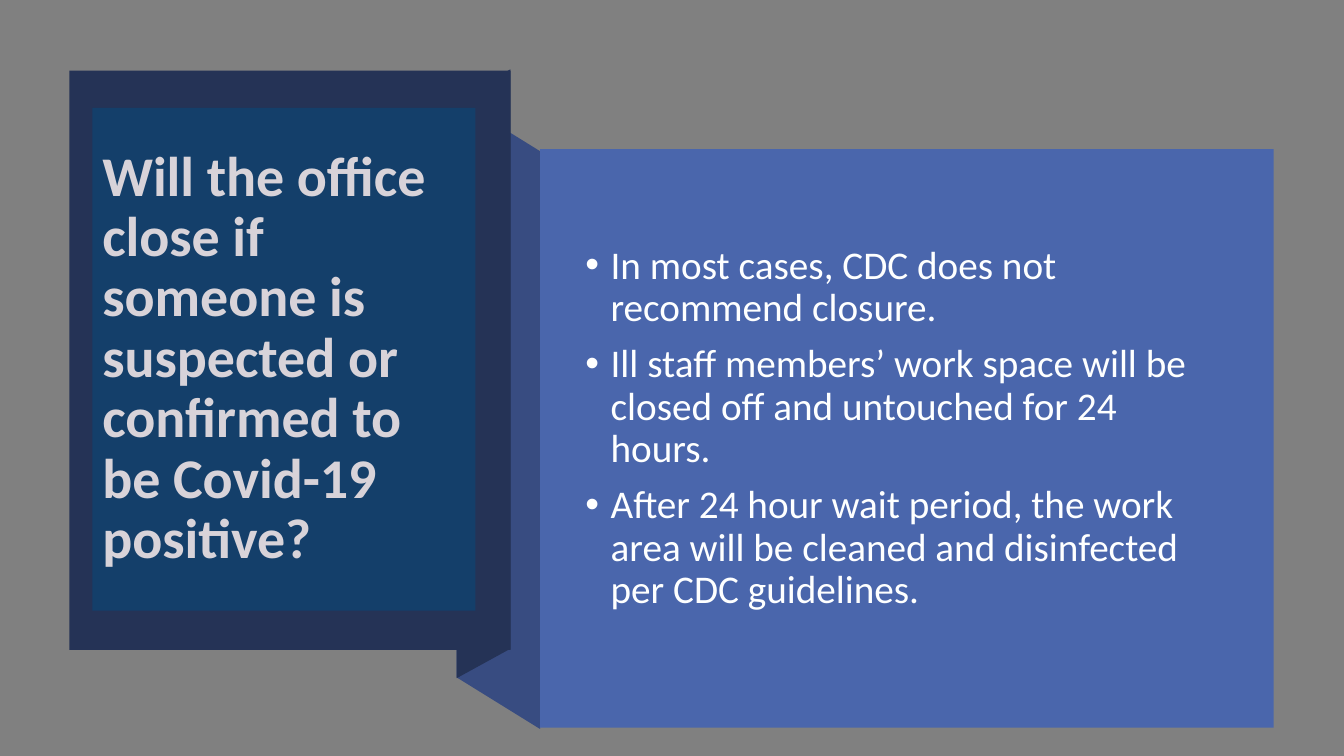
import pptx
import pptx.util
import pptx.dml.color
import pptx.enum.shapes
import pptx.enum.text
import lxml.etree
from pptx.util import Cm

RGBColor = pptx.dml.color.RGBColor
GREY = RGBColor(0x80, 0x80, 0x80)
NAVY = RGBColor(0x25, 0x33, 0x56)
FOLD_BLUE = RGBColor(0x38, 0x4C, 0x81)
TITLE_BLUE = RGBColor(0x14, 0x3F, 0x6A)
PANEL_BLUE = RGBColor(0x4A, 0x66, 0xAC)
TITLE_TEXT = RGBColor(0xD8, 0xD3, 0xD9)
BODY_TEXT = RGBColor(0xFE, 0xFF, 0xFF)

FONT = "Calibri"
QUESTION = ("Will the office close if someone is suspected or confirmed "
            "to be Covid-19 positive?")
ANSWERS = [
    "In most cases, CDC does not recommend closure.",
    "Ill staff members’ work space will be closed off and untouched for 24 hours.",
    "After 24 hour wait period, the work area will be cleaned and disinfected "
    "per CDC guidelines.",
]


def paint(shape, color):
    shape.fill.solid()
    shape.fill.fore_color.rgb = color
    shape.line.fill.background()
    shape.shadow.inherit = False


def add_panel(page, left, top, width, height, color):
    panel = page.shapes.add_shape(
        pptx.enum.shapes.MSO_SHAPE.RECTANGLE,
        Cm(left), Cm(top), Cm(width), Cm(height))
    paint(panel, color)
    return panel


def add_fold(page, left, top, width, height, slant, color):
    """Upright band whose right side sits lower by slant (higher if negative)."""
    left_top = top + max(-slant, 0)
    right_top = top + max(slant, 0)
    side = height - abs(slant)
    right = left + width
    corners = [(right, right_top + side), (left, left_top + side),
               (left, left_top), (right, right_top)]
    points = [(Cm(x), Cm(y)) for x, y in corners]
    builder = page.shapes.build_freeform(*points[0])
    builder.add_line_segments(points[1:], close=True)
    paint(builder.convert_to_shape(), color)


def write_text(box, lines, size, color, bold=False):
    frame = box.text_frame
    frame.word_wrap = True
    frame.vertical_anchor = pptx.enum.text.MSO_ANCHOR.MIDDLE
    frame.text = "\n".join(lines)
    for para in frame.paragraphs:
        para.alignment = pptx.enum.text.PP_ALIGN.LEFT
        para.line_spacing = 0.9
        for span in para.runs:
            span.font.name = FONT
            span.font.size = pptx.util.Pt(size)
            span.font.bold = bold
            span.font.color.rgb = color


def add_bullet(para, indent):
    para.space_before = pptx.util.Pt(10)
    properties = para._p.get_or_add_pPr()
    properties.set("marL", str(indent))
    properties.set("indent", str(-indent))
    namespace = pptx.oxml.ns.qn
    font = lxml.etree.SubElement(properties, namespace("a:buFont"))
    font.set("typeface", "Arial")
    bullet = lxml.etree.SubElement(properties, namespace("a:buChar"))
    bullet.set("char", "•")


def add_ribbon(page, left, top):
    # Lighter side fold, then the dark fold behind the question
    add_fold(page, left, top + 0.76, 2.1, 15.86, 1.3, FOLD_BLUE)
    add_fold(page, left, top, 1.35, 15.34, -0.74, NAVY)


def add_question(page, left, top, width, height):
    add_panel(page, left, top, width, height, NAVY)
    title = add_panel(page, left + 0.58, top + 0.94,
                      width - 1.47, height - 1.93, TITLE_BLUE)
    write_text(title, [QUESTION], 40, TITLE_TEXT, bold=True)


def add_answers(page, left, top, width, height):
    add_panel(page, left, top, width, height, PANEL_BLUE)
    body = page.shapes.add_textbox(Cm(left + 0.89), Cm(top + 1.02),
                                   Cm(width - 1.95), Cm(height - 2.54))
    write_text(body, ANSWERS, 28, BODY_TEXT)
    for para in body.text_frame.paragraphs:
        add_bullet(para, Cm(0.64))


def main():
    deck = pptx.Presentation()
    deck.slide_width, deck.slide_height = Cm(33.87), Cm(19.05)
    page = deck.slides.add_slide(deck.slide_layouts[6])
    page.background.fill.solid()
    page.background.fill.fore_color.rgb = GREY

    add_ribbon(page, 11.51, 1.75)
    add_question(page, 1.75, 1.78, 11.12, 14.6)
    add_answers(page, 13.61, 3.76, 18.49, 14.58)
    deck.save("out.pptx")


if __name__ == "__main__":
    main()
